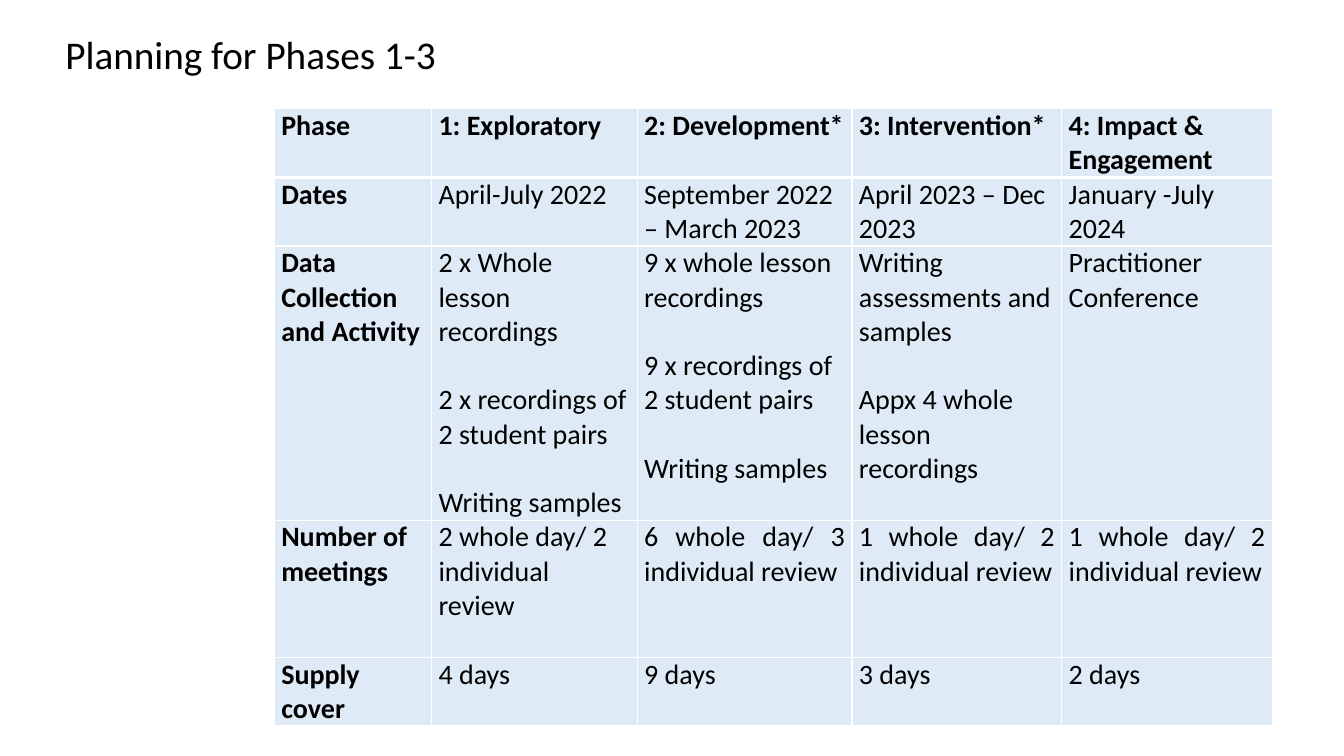
"""Build a slide with a table that plans the phases of a research project."""
from lxml.etree import SubElement
from pptx import Presentation
from pptx.dml.color import RGBColor
from pptx.enum.text import PP_ALIGN as Align
from pptx.oxml.ns import qn
from pptx.util import Inches, Pt

TITLE = "Planning for Phases 1-3"
ROWS = [
    ["Phase", "1: Exploratory", "2: Development*", "3: Intervention*", "4: Impact & Engagement"],
    ["Dates", "April-July 2022", "September 2022 – March 2023", "April 2023 – Dec 2023",
     "January -July 2024"],
    ["Data Collection and Activity",
     ("2 x Whole lesson recordings", "2 x recordings of 2 student pairs", "Writing samples"),
     ("9 x whole lesson recordings", "9 x recordings of 2 student pairs", "Writing samples"),
     ("Writing assessments and samples", "Appx 4 whole lesson recordings"),
     "Practitioner Conference"],
    ["Number of meetings", "2 whole day/ 2 individual review", "6 whole day/ 3 individual review",
     "1 whole day/ 2 individual review", "1 whole day/ 2 individual review"],
    ["Supply cover", "4 days", "9 days", "3 days", "2 days"],
]
JUSTIFIED = {(2, 4), (3, 2), (3, 3), (3, 4), (4, 1), (4, 2), (4, 3), (4, 4)}
COLORS = {"text": "000000", "cell": "DEEBF7", "border": "FFFFFF"}
FONT = "Calibri"
COLUMN_WIDTHS = [1.56, 2.04, 2.13, 2.08, 2.09]
LINE_HEIGHT = 0.34
ROW_LINES = [2, 2, 8, 4, 2]
TABLE_LEFT, TABLE_TOP = 2.72, 1.08
CELL_INSET = 0.07
TEXT_SIZE, TITLE_SIZE, ENTRY_GAP = 20, 28, 24.4


def style_paragraph(paragraph, size, bold=False):
    paragraph.font.name = FONT
    paragraph.font.size = Pt(size)
    paragraph.font.bold = bold
    paragraph.font.color.rgb = RGBColor.from_string(COLORS["text"])


def add_borders(cell, top, bottom):
    properties = cell._tc.get_or_add_tcPr()
    for side, width in (("L", 1), ("R", 1), ("T", top), ("B", bottom)):
        line = SubElement(properties, qn(f"a:ln{side}"), w=str(Pt(width)))
        fill = SubElement(line, qn("a:solidFill"))
        SubElement(fill, qn("a:srgbClr"), val=COLORS["border"])


def fill_cell(cell, content, row, column):
    cell.margin_left = cell.margin_right = Inches(CELL_INSET)
    cell.margin_top = cell.margin_bottom = 0
    add_borders(cell, top=3 if row == 1 else 1, bottom=3 if row == 0 else 1)
    cell.fill.solid()
    cell.fill.fore_color.rgb = RGBColor.from_string(COLORS["cell"])
    entries = [content] if isinstance(content, str) else content
    frame = cell.text_frame
    for index, entry in enumerate(entries):
        paragraph = frame.add_paragraph() if index else frame.paragraphs[0]
        paragraph.text = entry
        paragraph.alignment = Align.JUSTIFY if (row, column) in JUSTIFIED else Align.LEFT
        paragraph.space_before = Pt(ENTRY_GAP if index else 0)
        style_paragraph(paragraph, TEXT_SIZE, bold=row == 0 or column == 0)


def add_phase_table(slide):
    heights = [lines * LINE_HEIGHT for lines in ROW_LINES]
    table = slide.shapes.add_table(
        len(ROWS), len(COLUMN_WIDTHS), Inches(TABLE_LEFT), Inches(TABLE_TOP),
        Inches(sum(COLUMN_WIDTHS)), Inches(sum(heights))).table
    for column, width in zip(table.columns, COLUMN_WIDTHS):
        column.width = Inches(width)
    for row, height in zip(table.rows, heights):
        row.height = Inches(height)
    for row, contents in enumerate(ROWS):
        for column, content in enumerate(contents):
            fill_cell(table.cell(row, column), content, row, column)


def add_title(slide):
    box = slide.shapes.add_textbox(Inches(0.55), Inches(0.25), Inches(6.5), Inches(0.57))
    box.text_frame.word_wrap = True
    paragraph = box.text_frame.paragraphs[0]
    paragraph.text = TITLE
    style_paragraph(paragraph, TITLE_SIZE)


def main():
    presentation = Presentation()
    presentation.slide_width, presentation.slide_height = Inches(13.33), Inches(7.5)
    slide = presentation.slides.add_slide(presentation.slide_layouts[6])
    add_phase_table(slide)
    add_title(slide)
    presentation.save("out.pptx")


if __name__ == "__main__":
    main()
